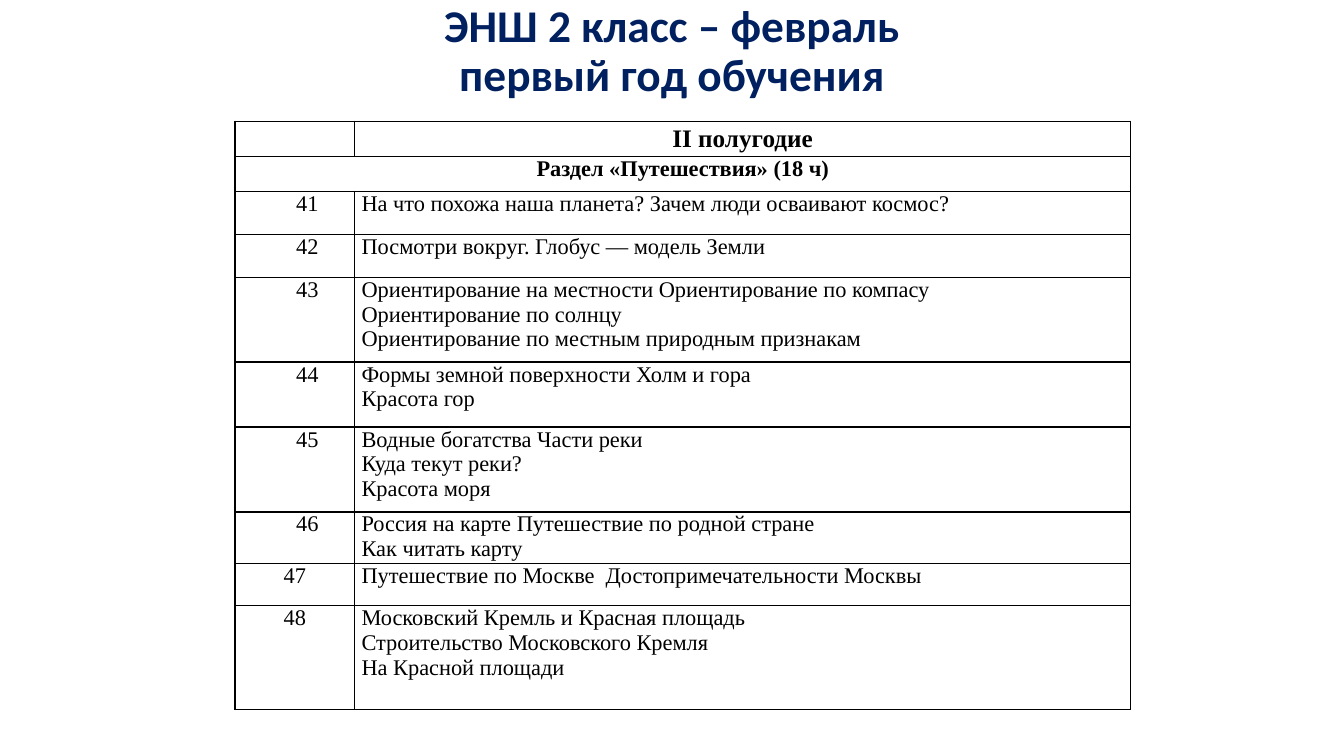
import pptx
import pptx.util
import pptx.dml.color
import pptx.enum.text
import pptx.oxml
import pptx.oxml.ns

Pt = pptx.util.Pt
Color = pptx.dml.color.RGBColor
Align = pptx.enum.text.PP_ALIGN

TITLE = "ЭНШ 2 класс – февраль\vпервый год обучения"
HALF_YEAR = "II полугодие"
SECTION = "Раздел «Путешествия» (18 ч)"
LESSONS = [
    ("41", 30.7, ["На что похожа наша планета? Зачем люди осваивают космос?"]),
    ("42", 30.7, ["Посмотри вокруг. Глобус — модель Земли"]),
    ("43", 60.7, ["Ориентирование на местности Ориентирование по компасу",
                  "Ориентирование по солнцу",
                  "Ориентирование по местным природным признакам"]),
    ("44", 46.4, ["Формы земной поверхности Холм и гора", "Красота гор"]),
    ("45", 60.7, ["Водные богатства Части реки", "Куда текут реки?", "Красота моря"]),
    ("46", 37.1, ["Россия на карте Путешествие по родной стране", "Как читать карту"]),
    ("47", 30, ["Путешествие по Москве  Достопримечательности Москвы"]),
    ("48", 74.3, ["Московский Кремль и Красная площадь",
                  "Строительство Московского Кремля",
                  "На Красной площади"]),
]
INDENTED = {"41", "42", "43", "44", "45", "46"}
HEADER_HEIGHT = 25
COLUMN_WIDTHS = [85.4, 554.3]
TABLE_LEFT, TABLE_TOP = 167.9, 86.6

THEME = {
    "title_font": "Calibri", "title_size": 32.4, "title_color": Color.from_string("002060"),
    "table_font": "Times New Roman", "header_size": 18, "body_size": 16,
    "text_color": Color.from_string("000000"), "border_color": "000000", "border_width": 1,
}


def set_font(font, name, size, color, bold):
    font.name, font.size, font.bold = name, Pt(size), bold
    font.color.rgb = color


def format_cell(cell):
    cell.margin_left = cell.margin_right = Pt(5.04)
    cell.margin_top = cell.margin_bottom = Pt(0)
    cell.fill.background()
    properties = cell._tc.get_or_add_tcPr()
    for position, side in enumerate(("lnL", "lnR", "lnT", "lnB")):
        border = pptx.oxml.parse_xml(
            f'<a:{side} {pptx.oxml.ns.nsdecls("a")} w="{Pt(THEME["border_width"])}">'
            f'<a:solidFill><a:srgbClr val="{THEME["border_color"]}"/></a:solidFill></a:{side}>')
        properties.insert(position, border)


def write_cell(cell, lines, size=THEME["body_size"], bold=False,
               alignment=Align.LEFT, spacing=1.0, indent=0):
    cell.text = "\n".join(lines)
    for paragraph in cell.text_frame.paragraphs:
        paragraph.alignment = alignment
        paragraph.line_spacing = spacing
        if indent:
            paragraph._p.get_or_add_pPr().set("marL", str(Pt(indent)))
        set_font(paragraph.font, THEME["table_font"], size, THEME["text_color"], bold)


def add_title(slide):
    title = slide.shapes.title
    title.left, title.top, title.width, title.height = Pt(66), Pt(13.7), Pt(828), Pt(47.5)
    frame = title.text_frame
    frame.text = TITLE
    frame.word_wrap = True
    frame.auto_size = pptx.enum.text.MSO_AUTO_SIZE.NONE
    frame.vertical_anchor = pptx.enum.text.MSO_ANCHOR.MIDDLE
    paragraph = frame.paragraphs[0]
    paragraph.alignment = Align.CENTER
    paragraph.line_spacing = 0.9
    set_font(paragraph.font, THEME["title_font"], THEME["title_size"], THEME["title_color"], True)


def add_lessons(slide):
    heights = [HEADER_HEIGHT] * 2 + [height for _, height, _ in LESSONS]
    table = slide.shapes.add_table(
        len(heights), len(COLUMN_WIDTHS), Pt(TABLE_LEFT), Pt(TABLE_TOP),
        Pt(sum(COLUMN_WIDTHS)), Pt(sum(heights))).table
    table.first_row = table.horz_banding = False
    for column, width in zip(table.columns, COLUMN_WIDTHS):
        column.width = Pt(width)
    for row, height in zip(table.rows, heights):
        row.height = Pt(height)
    for cell in table.iter_cells():
        format_cell(cell)

    write_cell(table.cell(0, 0), [""])
    write_cell(table.cell(0, 1), [HALF_YEAR], THEME["header_size"], True, Align.CENTER, 1.15)
    table.cell(1, 0).merge(table.cell(1, 1))
    write_cell(table.cell(1, 0), [SECTION], bold=True, alignment=Align.CENTER)
    for row, (number, _, topics) in enumerate(LESSONS, start=2):
        indent = 18 if number in INDENTED else 0
        write_cell(table.cell(row, 0), [number], alignment=Align.CENTER, indent=indent)
        write_cell(table.cell(row, 1), topics)


def main():
    presentation = pptx.Presentation()
    presentation.slide_width, presentation.slide_height = Pt(960), Pt(540)
    slide = presentation.slides.add_slide(presentation.slide_layouts[5])
    add_title(slide)
    add_lessons(slide)
    presentation.save("out.pptx")


if __name__ == "__main__":
    main()
